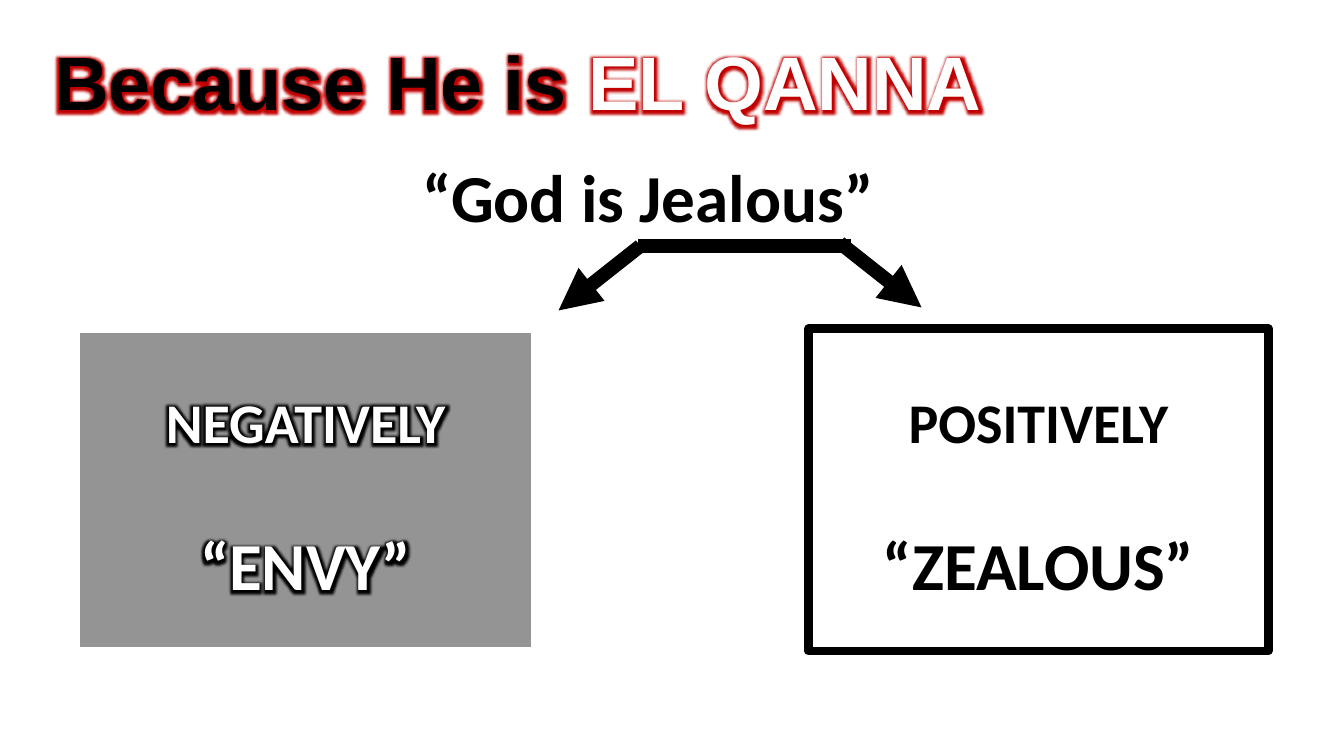
from dataclasses import dataclass

from lxml.etree import SubElement
from pptx import Presentation
from pptx.dml.color import RGBColor
from pptx.enum.shapes import MSO_CONNECTOR, MSO_SHAPE
from pptx.enum.text import MSO_ANCHOR, PP_ALIGN
from pptx.oxml import parse_xml
from pptx.oxml.ns import qn
from pptx.util import Inches, Pt


@dataclass(frozen=True)
class Theme:
    black: str = "000000"
    white: str = "FFFFFF"
    red: str = "C00000"
    heading_font: str = "Arial"
    body_font: str = "Calibri"
    title_size: int = 54
    large_size: int = 48
    label_size: int = 40
    border: int = 6
    branch: int = 10
    glow: int = 8
    panel_opacity: int = 42


class SlideBuilder:
    def __init__(self, page, theme):
        self.page = page
        self.theme = theme

    def panel(self, left, top, width, height, fill, border):
        box = self.page.shapes.add_shape(
            MSO_SHAPE.RECTANGLE, Inches(left), Inches(top), Inches(width), Inches(height))
        box.shadow.inherit = False
        box.fill.solid()
        box.fill.fore_color.rgb = RGBColor.from_string(fill)
        color = box.fill._xPr.find(qn("a:solidFill"))[0]
        SubElement(color, qn("a:alpha"), val=str(self.theme.panel_opacity * 1000))
        box.line.color.rgb = RGBColor.from_string(border)
        box.line.width = Pt(self.theme.border)

    def text_box(self, left, top, width, height, anchor=MSO_ANCHOR.TOP):
        frame = self.page.shapes.add_textbox(
            Inches(left), Inches(top), Inches(width), Inches(height)).text_frame
        frame.word_wrap = True
        frame.vertical_anchor = anchor
        return frame

    def span(self, para, text, size, color, font, glow=None):
        span = para.add_run()
        span.text = text
        span.font.size = Pt(size)
        span.font.bold = True
        span.font.name = font
        span.font.color.rgb = RGBColor.from_string(color)
        if glow:
            self.add_glow(span, glow)

    def add_glow(self, span, color):
        namespace = "http://schemas.openxmlformats.org/drawingml/2006/main"
        effects = parse_xml(
            f'<a:effectLst xmlns:a="{namespace}"><a:glow rad="{Pt(self.theme.glow)}">'
            f'<a:srgbClr val="{color}"/></a:glow></a:effectLst>')
        span._r.rPr.find(qn("a:solidFill")).addnext(effects)

    def branch(self, start, end, arrow=False):
        line = self.page.shapes.add_connector(
            MSO_CONNECTOR.STRAIGHT, *(Inches(value) for value in start + end))
        line.line.color.rgb = RGBColor.from_string(self.theme.black)
        line.line.width = Pt(self.theme.branch)
        if arrow:
            SubElement(line.line._get_or_add_ln(), qn("a:tailEnd"), type="triangle")
        SubElement(line._element.spPr, qn("a:effectLst"))


def main():
    deck = Presentation()
    deck.slide_width, deck.slide_height = Inches(13.33), Inches(7.5)
    theme = Theme()
    slide = SlideBuilder(deck.slides.add_slide(deck.slide_layouts[6]), theme)

    panel_width = 4.56
    meanings = [
        (8.02, "POSITIVELY", "“ZEALOUS”", theme.white, theme.black, theme.black, None),
        (0.75, "NEGATIVELY", "“ENVY”", theme.black, theme.white, theme.white, theme.black),
    ]
    for left, _, _, fill, border, _, _ in meanings:
        slide.panel(left, 3.26, panel_width, 3.2, fill, border)

    title = slide.text_box(0.44, 0.13, 12.41, 1.45, MSO_ANCHOR.MIDDLE).paragraphs[0]
    title.line_spacing = 0.9
    for text, color in (("Because He is ", theme.black), ("EL QANNA", theme.white)):
        slide.span(title, text, theme.title_size, color, theme.heading_font, theme.red)

    statement = slide.text_box(0.44, 1.58, 11.98, 1.28).paragraphs[0]
    statement.alignment = PP_ALIGN.CENTER
    statement.line_spacing = 0.9
    slide.span(statement, "“God is Jealous”", theme.large_size, theme.black, theme.body_font)

    for left, label, meaning, _, _, color, glow in meanings:
        frame = slide.text_box(left, 3.8, panel_width, 2.26)
        label_para, meaning_para = frame.paragraphs[0], frame.add_paragraph()
        meaning_para.space_before = Pt(49)
        for para, text, size in ((label_para, label, theme.label_size),
                                 (meaning_para, meaning, theme.large_size)):
            para.alignment = PP_ALIGN.CENTER
            slide.span(para, text, size, color, theme.body_font, glow)

    slide.branch((6.33, 2.44), (8.44, 2.44))
    slide.branch((6.35, 2.44), (5.54, 3.08), arrow=True)
    slide.branch((8.33, 2.41), (9.14, 3.05), arrow=True)

    deck.save("out.pptx")


if __name__ == "__main__":
    main()
